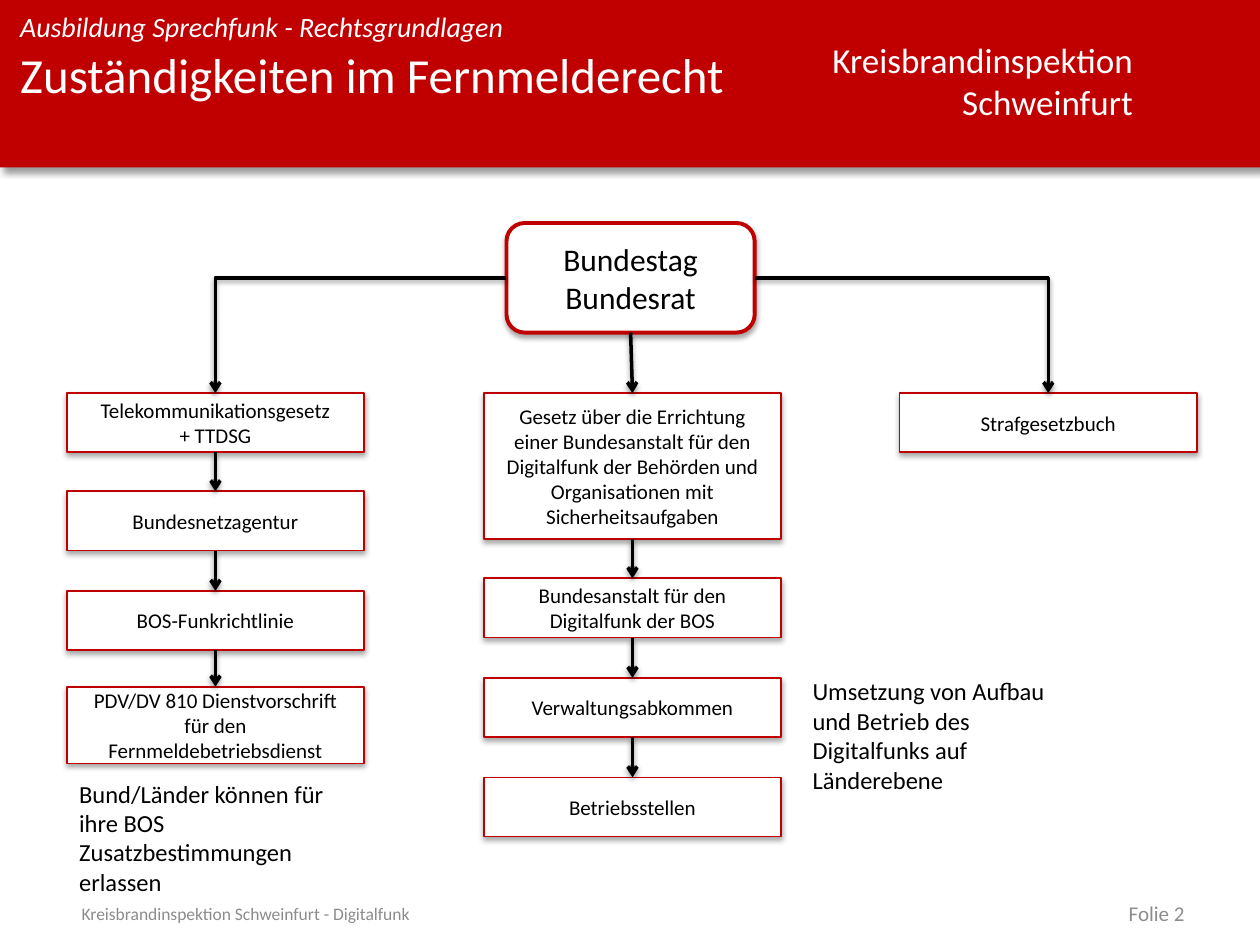
import pptx
import pptx.util
import pptx.dml.color
import pptx.enum.shapes
import pptx.enum.text
import pptx.oxml
import pptx.oxml.ns

Inches = pptx.util.Inches
Pt = pptx.util.Pt
RGBColor = pptx.dml.color.RGBColor
Shape = pptx.enum.shapes.MSO_SHAPE
Link = pptx.enum.shapes.MSO_CONNECTOR
Align = pptx.enum.text.PP_ALIGN
Anchor = pptx.enum.text.MSO_ANCHOR

RED = RGBColor(0xC0, 0x00, 0x00)
WHITE = RGBColor(0xFF, 0xFF, 0xFF)
BLACK = RGBColor(0x00, 0x00, 0x00)
GREY = RGBColor(0x8C, 0x8C, 0x8C)

TOP, LEFT, BOTTOM, RIGHT = range(4)
BOX_W, BOX_H = 2.36, 0.47

# Per column: left edge, then (text, top, height) of each box
COLUMNS = [
    (0.53, [
        ("Telekommunikationsgesetz\n+ TTDSG", 3.12, BOX_H),
        ("Bundesnetzagentur", 3.9, BOX_H),
        ("BOS-Funkrichtlinie", 4.69, BOX_H),
        ("PDV/DV 810 Dienstvorschrift für den Fernmeldebetriebsdienst", 5.45, 0.61),
    ]),
    (3.84, [
        ("Gesetz über die Errichtung einer Bundesanstalt für den Digitalfunk "
         "der Behörden und Organisationen mit Sicherheitsaufgaben", 3.12, 1.16),
        ("Bundesanstalt für den Digitalfunk der BOS", 4.59, BOX_H),
        ("Verwaltungsabkommen", 5.38, BOX_H),
        ("Betriebsstellen", 6.17, BOX_H),
    ]),
    (7.14, [("Strafgesetzbuch", 3.12, BOX_H)]),
]


def add_shadow(props, alpha, blur, dist, angle):
    """Put an outer shadow (percent, points, points, degrees) into an spPr."""
    for old in props.findall(pptx.oxml.ns.qn("a:effectLst")):
        props.remove(old)
    props.append(pptx.oxml.parse_xml(
        f'<a:effectLst {pptx.oxml.ns.nsdecls("a")}>'
        f'<a:outerShdw blurRad="{Pt(blur)}" dist="{Pt(dist)}" dir="{angle * 60000}" '
        f'algn="tl" rotWithShape="0"><a:srgbClr val="000000">'
        f'<a:alpha val="{alpha * 1000}"/></a:srgbClr></a:outerShdw></a:effectLst>'))


def set_text(shape, text, size, color, align=Align.LEFT, anchor=Anchor.TOP, italic=False):
    frame = shape.text_frame
    frame.text = text
    frame.word_wrap = True
    frame.vertical_anchor = anchor
    for par in frame.paragraphs:
        par.alignment = align
        par.font.name = "Calibri"
        par.font.size = Pt(size)
        par.font.color.rgb = color
        par.font.italic = italic
    return frame


def clear_insets(frame):
    frame.margin_left = frame.margin_top = frame.margin_right = frame.margin_bottom = 0


def add_label(slide, place, text, size, color, **style):
    label = slide.shapes.add_textbox(*map(Inches, place))
    return set_text(label, text, size, color, **style)


def add_box(slide, place, text, size=12, kind=Shape.RECTANGLE, width=1):
    box = slide.shapes.add_shape(kind, *map(Inches, place))
    box.shadow.inherit = False
    box.fill.solid()
    box.fill.fore_color.rgb = WHITE
    box.line.color.rgb = RED
    box.line.width = Pt(width)
    add_shadow(box.element.spPr, 35, 3.1, 1.8, 90)
    set_text(box, text, size, BLACK, Align.CENTER, Anchor.MIDDLE)
    return box


def add_arrow(slide, start, side, end, bent=False):
    """Join one side of a box to the top of another."""
    arrow = slide.shapes.add_connector(Link.ELBOW if bent else Link.STRAIGHT, 0, 0, 0, 0)
    arrow.begin_connect(start, side)
    arrow.end_connect(end, TOP)
    arrow.line.color.rgb = BLACK
    arrow.line.width = Pt(2)
    props = arrow.element.spPr
    if bent:
        props.find(pptx.oxml.ns.qn("a:prstGeom")).set("prst", "bentConnector2")
    props.find(pptx.oxml.ns.qn("a:ln")).append(pptx.oxml.parse_xml(
        f'<a:tailEnd {pptx.oxml.ns.nsdecls("a")} type="arrow"/>'))
    add_shadow(props, 38, 3.1, 1.6, 90)


def add_header(slide):
    bar = slide.shapes.add_shape(Shape.RECTANGLE, 0, 0, Inches(10), Inches(1.33))
    bar.shadow.inherit = False
    bar.fill.solid()
    bar.fill.fore_color.rgb = RED
    bar.line.fill.background()
    add_shadow(bar.element.spPr, 40, 4, 3, 45)

    title = slide.shapes.title
    title.element.addprevious(bar.element)  # the bar lies behind the title
    title.left, title.top = Inches(0.16), Inches(0.35)
    title.width, title.height = Inches(6.32), Inches(0.99)
    clear_insets(set_text(title, "Zuständigkeiten im Fernmelderecht", 28, WHITE))

    clear_insets(add_label(slide, (0.16, 0.08, 6.32, 0.27),
                           "Ausbildung Sprechfunk - Rechtsgrundlagen", 16, WHITE, italic=True))
    owner = add_label(slide, (6.48, 0.26, 2.61, 0.77),
                      "Kreisbrandinspektion\nSchweinfurt", 20, WHITE, align=Align.RIGHT)
    owner.word_wrap = False


def add_chain(slide, left, steps):
    """Stack the boxes of a column, link them and return the first."""
    boxes = [add_box(slide, (left, top, BOX_W, height), text) for text, top, height in steps]
    for upper, lower in zip(boxes, boxes[1:]):
        add_arrow(slide, upper, BOTTOM, lower)
    return boxes[0]


def add_footer(slide):
    add_label(slide, (0.55, 7.15, 6.04, 0.2), "Kreisbrandinspektion Schweinfurt - Digitalfunk",
              10, GREY, anchor=Anchor.MIDDLE)
    add_label(slide, (7.17, 7.15, 2.33, 0.2), "Folie 2", 12, GREY,
              align=Align.RIGHT, anchor=Anchor.MIDDLE)


def main():
    deck = pptx.Presentation()
    deck.slide_width, deck.slide_height = Inches(10), Inches(7.5)
    slide = deck.slides.add_slide(deck.slide_layouts.get_by_name("Title Only"))

    add_header(slide)
    root = add_box(slide, (4.02, 1.77, 1.97, 0.87), "Bundestag\nBundesrat", 18,
                   Shape.ROUNDED_RECTANGLE, 2.25)
    for (left, steps), side in zip(COLUMNS, (LEFT, BOTTOM, RIGHT)):
        first = add_chain(slide, left, steps)
        add_arrow(slide, root, side, first, bent=side != BOTTOM)
    add_label(slide, (0.53, 6.13, BOX_W, 1.04),
              "Bund/Länder können für ihre BOS Zusatzbestimmungen erlassen", 14, BLACK)
    add_label(slide, (6.35, 5.32, 2.19, 1.04),
              "Umsetzung von Aufbau und Betrieb des Digitalfunks auf Länderebene", 14, BLACK)
    add_footer(slide)
    deck.save("out.pptx")


if __name__ == "__main__":
    main()
